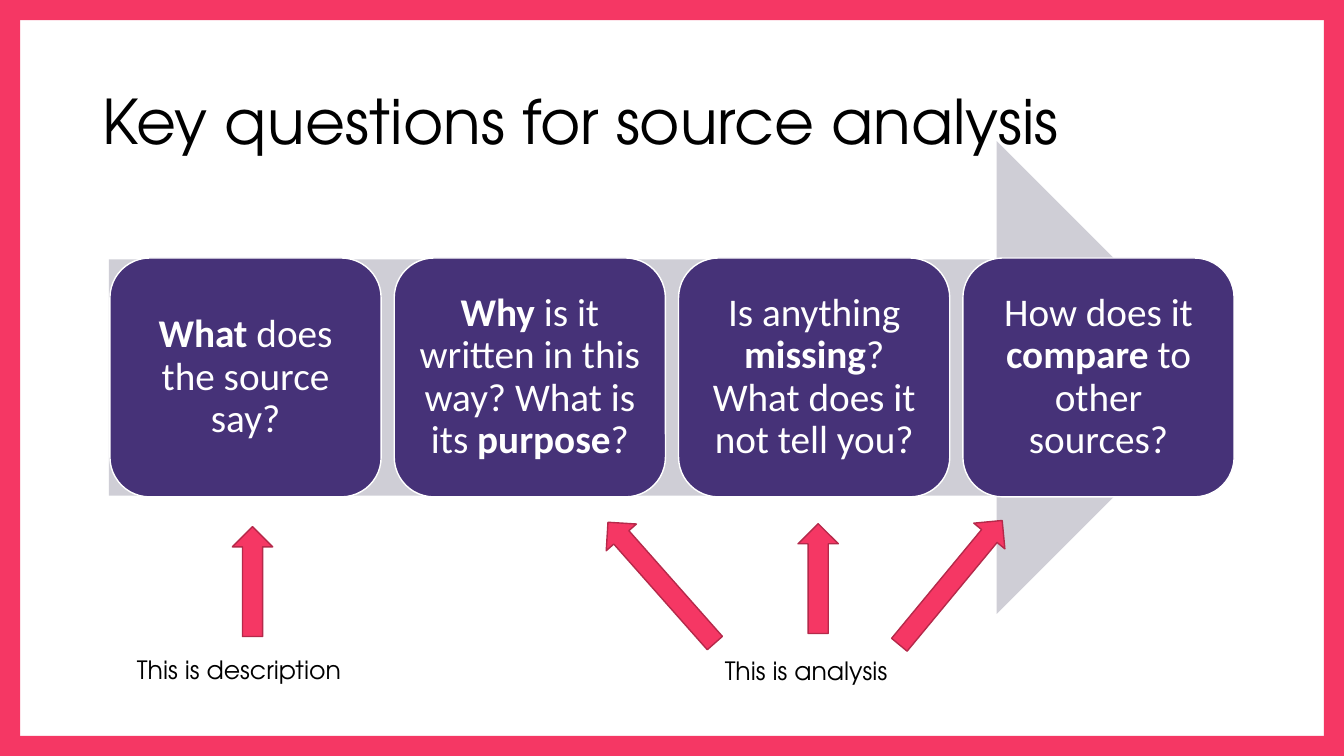
from pptx import Presentation
from pptx.dml.color import RGBColor
from pptx.enum import shapes, text
from pptx.util import Inches, Pt

# Content: each question is a list of (words, bold) spans
TITLE = "Key questions for source analysis"
QUESTIONS = [
    [("What ", True), ("does the source say?", False)],
    [("Why ", True), ("is it written in this way? What is its ", False),
     ("purpose", True), ("?", False)],
    [("Is anything ", False), ("missing", True), ("? What does it not tell you?", False)],
    [("How does it ", False), ("compare", True), (" to other sources?", False)],
]
LABELS = [("This is description", 1.26, 6.44, 2.49), ("This is analysis", 7.09, 6.45, 1.87)]
# Pointer arrows: left, top, length, rotation
POINTERS = [(1.96, 5.57, 1.09, 270), (5.76, 5.58, 1.6, 228.5),
            (7.57, 5.54, 1.09, 270), (8.63, 5.58, 1.6, 309.6)]

WIDTH, HEIGHT, BORDER = 13.33, 7.5, 0.2
CARD_LEFT, CARD_TOP, CARD_WIDTH, CARD_HEIGHT, CARD_STEP = 1.09, 2.56, 2.69, 2.37, 2.82
PINK, DARK_PINK, PURPLE, GREY = "F53764", "B5294A", "463278", "CFCED6"
BLACK, WHITE = "000000", "FFFFFF"
HEADING_FONT, CARD_FONT = "TeX Gyre Adventor", "Calibri"

deck = Presentation()
deck.slide_width, deck.slide_height = Inches(WIDTH), Inches(HEIGHT)
page = deck.slides.add_slide(deck.slide_layouts[6])


def colour(value):
    return RGBColor.from_string(value)


def add_shape(kind, left, top, width, height, fill, line=None):
    shape = page.shapes.add_shape(kind, Inches(left), Inches(top), Inches(width), Inches(height))
    shape.shadow.inherit = False
    shape.fill.solid()
    shape.fill.fore_color.rgb = colour(fill)
    if line:
        shape.line.color.rgb = colour(line)
        shape.line.width = Pt(1)
    else:
        shape.line.fill.background()
    return shape


def set_font(para, name, size, value):
    para.font.name, para.font.size = name, Pt(size)
    para.font.color.rgb = colour(value)


def add_text(words, left, top, width, height, size):
    box = page.shapes.add_textbox(Inches(left), Inches(top), Inches(width), Inches(height))
    box.text_frame.word_wrap = True
    para = box.text_frame.paragraphs[0]
    para.text = words
    set_font(para, HEADING_FONT, size, BLACK)
    return box.text_frame


# Border
for left in (0, WIDTH - BORDER):
    add_shape(shapes.MSO_SHAPE.RECTANGLE, left, 0, BORDER, HEIGHT, PINK)
for top in (0, HEIGHT - BORDER):
    add_shape(shapes.MSO_SHAPE.RECTANGLE, 0, top, WIDTH, BORDER, PINK)

# Title
title = add_text(TITLE, 0.92, 0.51, 10, 1.45, 44)
title.vertical_anchor = text.MSO_ANCHOR.MIDDLE
title.paragraphs[0].line_spacing = 0.9

# Question cards on the large arrow
add_shape(shapes.MSO_SHAPE.RIGHT_ARROW, 1.08, 1.4, 11.15, 4.69, GREY)
for index, question in enumerate(QUESTIONS):
    card = add_shape(shapes.MSO_SHAPE.ROUNDED_RECTANGLE, CARD_LEFT + index * CARD_STEP,
                     CARD_TOP, CARD_WIDTH, CARD_HEIGHT, PURPLE, WHITE)
    frame = card.text_frame
    frame.word_wrap = True
    frame.vertical_anchor = text.MSO_ANCHOR.MIDDLE
    frame.margin_left = frame.margin_right = Inches(0.12)
    frame.margin_top = frame.margin_bottom = Inches(0.12)
    para = frame.paragraphs[0]
    para.alignment = text.PP_ALIGN.CENTER
    para.line_spacing = 0.9
    set_font(para, CARD_FONT, 28, WHITE)
    for words, bold in question:
        span = para.add_run()
        span.text, span.font.bold = words, bold

# Labels and their pointers
for words, left, top, width in LABELS:
    add_text(words, left, top, width, 0.4, 18)
for left, top, length, rotation in POINTERS:
    pointer = add_shape(shapes.MSO_SHAPE.RIGHT_ARROW, left, top, length, 0.4, PINK, DARK_PINK)
    pointer.rotation = rotation

deck.save("out.pptx")
